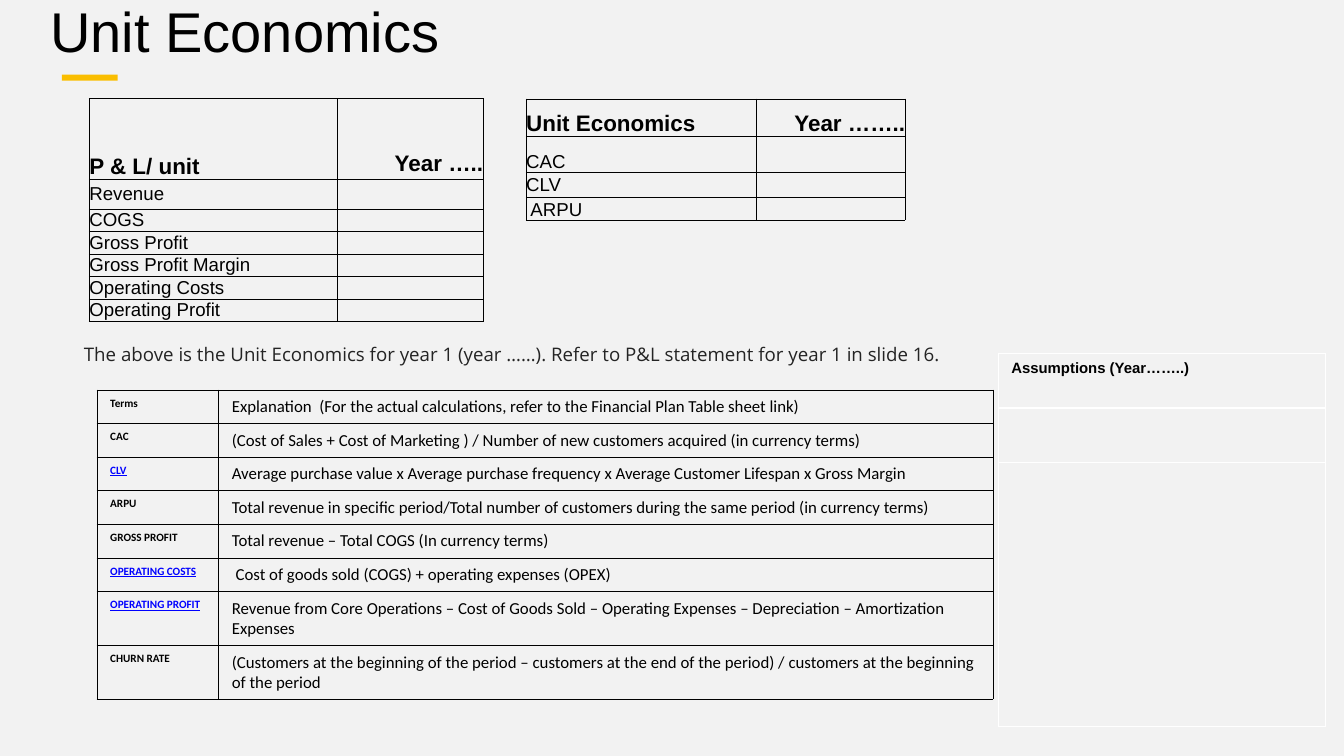
from dataclasses import dataclass
from typing import NamedTuple, Optional

from lxml.etree import SubElement
from pptx import Presentation
from pptx.dml.color import RGBColor as RGB
from pptx.enum.shapes import MSO_SHAPE as Shape
from pptx.enum.text import MSO_ANCHOR as Anchor, MSO_AUTO_SIZE as Fit, PP_ALIGN as Align
from pptx.oxml.ns import qn
from pptx.util import Inches, Pt


class Style(NamedTuple):
    size: int
    font: str
    color: str
    bold: bool = False
    under: bool = False


@dataclass(frozen=True)
class Theme:
    back: str = "F2F2F2"
    gold: str = "FABE00"
    black: str = "000000"
    white: str = "FFFFFF"
    title: Style = Style(60, "Arial", "000000")
    head: Style = Style(24, "Arial", "000000", True)
    item: Style = Style(20, "Arial", "000000")
    note: Style = Style(20, "Open Sans", "242424")
    term: Style = Style(12, "Calibri", "000000", True)
    link: Style = Style(12, "Calibri", "0000FF", True, True)
    body: Style = Style(18, "Calibri", "000000")
    side: Style = Style(16, "Arial", "000000", True)


class Entry(NamedTuple):
    text: str
    style: Style
    anchor: Anchor = Anchor.TOP
    align: Align = Align.LEFT
    lift: float = 0


@dataclass(frozen=True)
class Grid:
    """A table; rim, rule and under are line widths: outside, inside, below the header."""
    left: float
    top: float
    cols: list[float]
    rows: list[float]
    cells: list[list[Optional[Entry]]]
    color: str
    pad: tuple[float, float] = (0, 0)
    rim: float = 0.5
    rule: float = 0.5
    under: float = 0.5


T = Theme()


def add_run(para, text: str, style: Style) -> None:
    run = para.add_run()
    run.text = text
    font = run.font
    font.size, font.name = Pt(style.size), style.font
    font.bold, font.underline = style.bold, style.under
    font.color.rgb = RGB.from_string(style.color)


def add_edge(cell, side: str, width: float, color: str) -> None:
    line = SubElement(cell._tc.get_or_add_tcPr(), qn(f"a:ln{side}"), w=str(Pt(width)))
    fill = SubElement(line, qn("a:solidFill"))
    SubElement(fill, qn("a:srgbClr"), val=color)


def fill_cell(cell, entry: Optional[Entry], pad: tuple[float, float]) -> None:
    cell.fill.background()
    wide, high = pad
    cell.margin_left = cell.margin_right = Inches(wide)
    cell.margin_top = cell.margin_bottom = Inches(high)
    if entry:
        cell.margin_bottom = Inches(high + entry.lift)
        cell.vertical_anchor = entry.anchor
        para = cell.text_frame.paragraphs[0]
        para.alignment = entry.align
        add_run(para, entry.text, entry.style)


def add_grid(slide, grid: Grid) -> None:
    rows, cols = len(grid.rows), len(grid.cols)
    frame = slide.shapes.add_table(rows, cols, Inches(grid.left), Inches(grid.top),
                                   Inches(sum(grid.cols)), Inches(sum(grid.rows)))
    table = frame.table
    table.first_row = table.horz_banding = False
    for col, width in zip(table.columns, grid.cols):
        col.width = Inches(width)
    for row, height in zip(table.rows, grid.rows):
        row.height = Inches(height)
    for r, line in enumerate(grid.cells):
        for c, entry in enumerate(line):
            cell = table.cell(r, c)
            outer = {"L": c == 0, "R": c == cols - 1, "T": r == 0, "B": r == rows - 1}
            for side, is_rim in outer.items():
                width = grid.rim if is_rim else grid.rule
                if side == "B" and r == 0:
                    width = grid.under
                add_edge(cell, side, width, grid.color)
            fill_cell(cell, entry, grid.pad)


def add_title(slide, text: str) -> None:
    title = slide.shapes.title
    title.left, title.top = Inches(0.65), Inches(0.05)
    title.width, title.height = Inches(16.74), Inches(0.8)
    frame = title.text_frame
    frame.auto_size, frame.vertical_anchor = Fit.NONE, Anchor.MIDDLE
    para = frame.paragraphs[0]
    para.alignment = Align.LEFT
    add_run(para, text, T.title)


def add_bar(slide) -> None:
    bar = slide.shapes.add_shape(Shape.RECTANGLE, Inches(0.92), Inches(1.11),
                                 Inches(0.83), Inches(0.09))
    bar.shadow.inherit = False
    bar.fill.solid()
    bar.fill.fore_color.rgb = RGB.from_string(T.gold)
    bar.line.fill.background()


def add_note(slide, text: str) -> None:
    box = slide.shapes.add_textbox(Inches(1.15), Inches(5.06), Inches(17.22), Inches(0.44))
    box.text_frame.word_wrap = True
    add_run(box.text_frame.paragraphs[0], text, T.note)


def head(text: str, align: Align = Align.LEFT, lift: float = 0) -> Entry:
    return Entry(text, T.head, Anchor.BOTTOM, align, lift)


def item(text: str, anchor: Anchor = Anchor.MIDDLE) -> list[Optional[Entry]]:
    """A label with an empty value cell beside it."""
    return [Entry(text, T.item, anchor), None]


PROFIT = ["Revenue", "COGS", "Gross Profit", "Gross Profit Margin",
          "Operating Costs", "Operating Profit"]
LINKS = {"CLV", "OPERATING COSTS", "OPERATING PROFIT"}
TERMS = {
    "Terms": "Explanation  (For the actual calculations, refer to the Financial Plan "
             "Table sheet link)",
    "CAC": "(Cost of Sales + Cost of Marketing ) / Number of new customers acquired "
           "(in currency terms)",
    "CLV": "Average purchase value x Average purchase frequency x Average Customer "
           "Lifespan x Gross Margin",
    "ARPU": "Total revenue in specific period/Total number of customers during the "
            "same period (in currency terms)",
    "GROSS PROFIT": "Total revenue – Total COGS (In currency terms)",
    "OPERATING COSTS": " Cost of goods sold (COGS) + operating expenses (OPEX)",
    "OPERATING PROFIT": "Revenue from Core Operations – Cost of Goods Sold – Operating "
                        "Expenses – Depreciation – Amortization Expenses",
    "CHURN RATE": "(Customers at the beginning of the period – customers at the end of "
                  "the period) / customers at the beginning of the period",
}
PAD = (0.2, 0.1)
GRIDS = [
    Grid(1.33, 1.47, [3.69, 2.17], [1.2, 0.44] + [0.33] * 5,
         [[head("P & L/ unit"), head("Year …..", Align.RIGHT, 0.05)]]
         + [item(name) for name in PROFIT], T.black, rim=1),
    Grid(7.83, 1.47, [3.42, 2.22], [0.55, 0.54, 0.38, 0.33],
         [[head("Unit Economics"), head("Year ……..", Align.RIGHT)],
          item("CAC", Anchor.BOTTOM), item("CLV"), item(" ARPU", Anchor.BOTTOM)], T.black),
    Grid(1.44, 5.8, [1.81, 11.53], [0.5] * 6 + [0.8] * 2,
         [[Entry(term, T.link if term in LINKS else T.term), Entry(text, T.body)]
          for term, text in TERMS.items()], T.black, PAD),
    Grid(14.85, 5.26, [4.88], [0.81, 0.81, 3.93],
         [[Entry("Assumptions (Year……..)", T.side, align=Align.JUSTIFY)], [None], [None]],
         T.white, PAD, rim=1, rule=1, under=3),
]


def main() -> None:
    deck = Presentation()
    deck.slide_width, deck.slide_height = Inches(20), Inches(11.25)
    slide = deck.slides.add_slide(deck.slide_layouts[5])
    slide.background.fill.solid()
    slide.background.fill.fore_color.rgb = RGB.from_string(T.back)
    add_title(slide, "Unit Economics")
    add_bar(slide)
    add_note(slide, "The above is the Unit Economics for year 1 (year ……). "
                    "Refer to P&L statement for year 1 in slide 16.")
    for grid in GRIDS:
        add_grid(slide, grid)
    deck.save("out.pptx")


if __name__ == "__main__":
    main()
